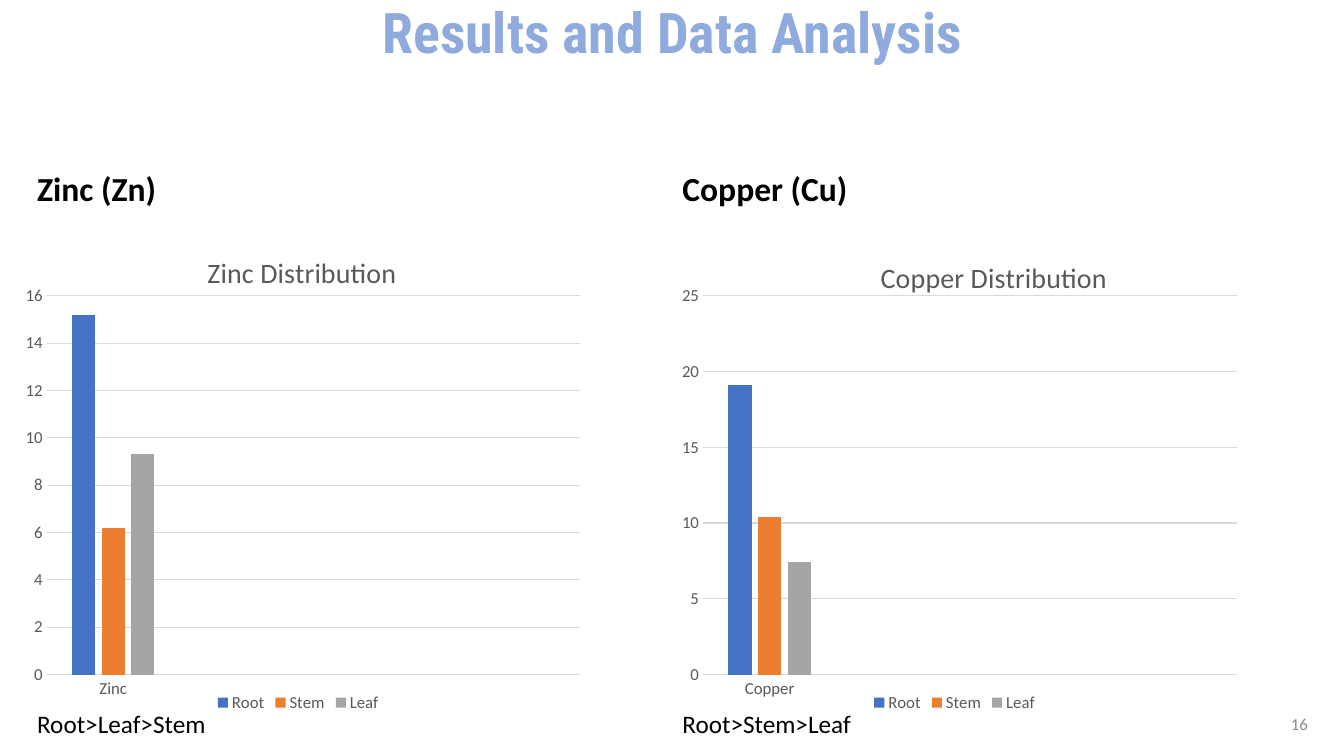
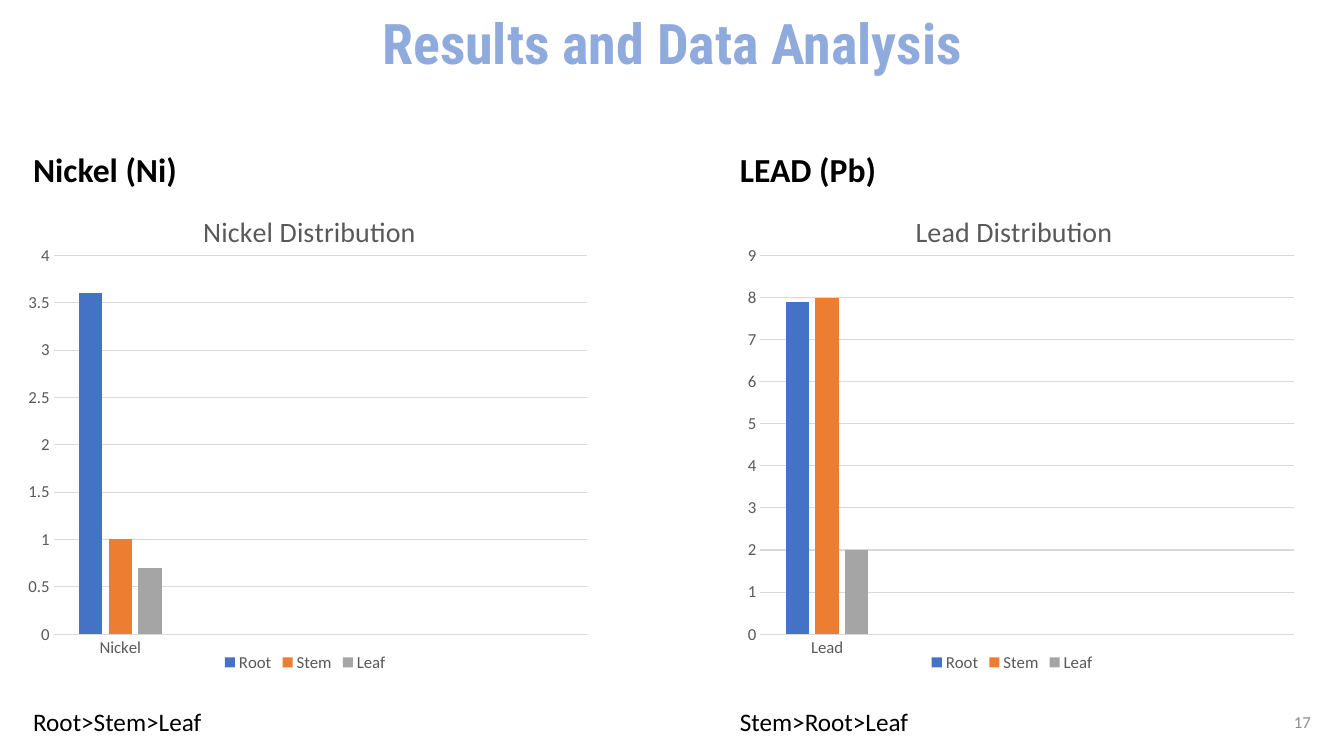
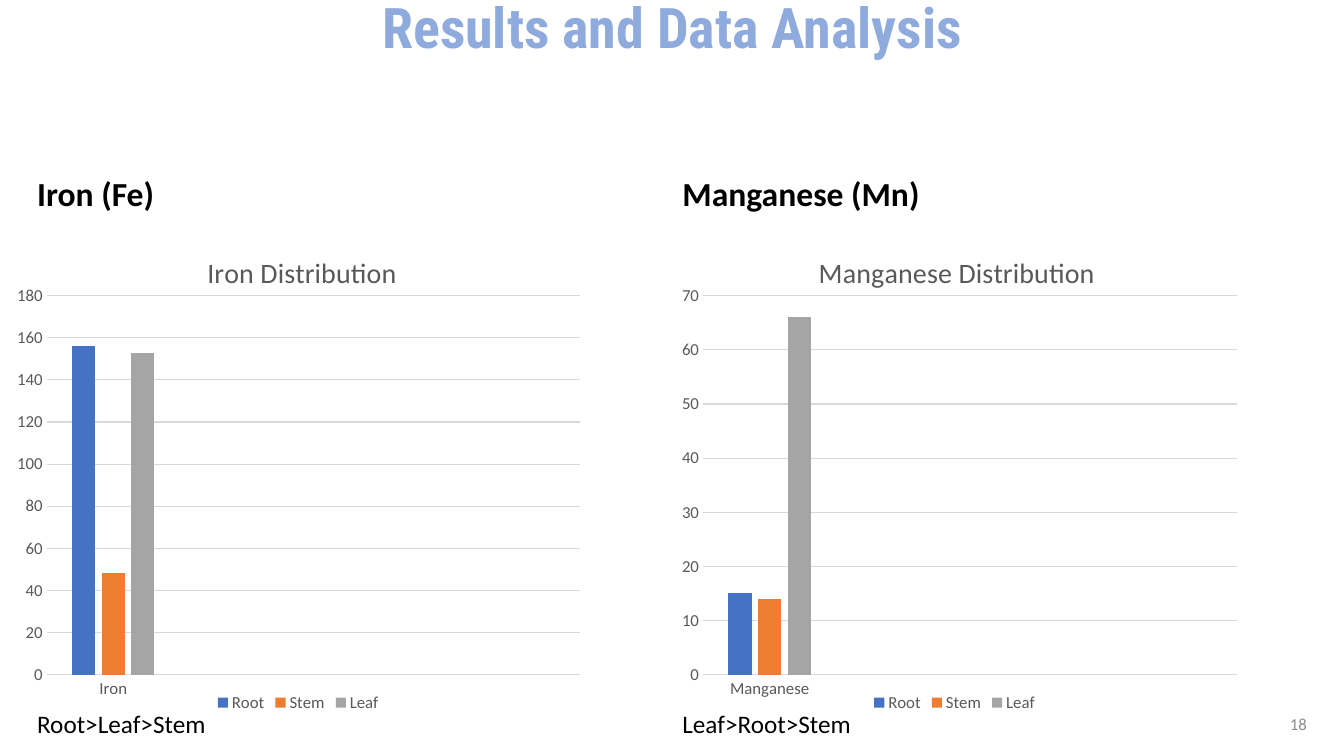
import pptx
import pptx.chart.data
import pptx.dml.color
import pptx.enum.chart
import pptx.enum.text
import pptx.oxml
import pptx.oxml.ns
import pptx.util
from dataclasses import dataclass

Inches, Pt = pptx.util.Inches, pptx.util.Pt
RGB = pptx.dml.color.RGBColor.from_string
Align, Anchor = pptx.enum.text.PP_ALIGN, pptx.enum.text.MSO_ANCHOR
qn = pptx.oxml.ns.qn


@dataclass(frozen=True)
class Theme:
    body_font: str = "Calibri"
    title_font: str = "Roboto Condensed"
    title_color: str = "8FAADC"
    text_color: str = "000000"
    number_color: str = "8C8C8C"
    chart_text: str = "595959"
    grid: str = "D9D9D9"
    organs: tuple = (("Root", "4472C4"), ("Stem", "ED7D31"), ("Leaf", "A5A5A5"))
    title_size: int = 40
    heading_size: int = 24
    chart_title_size: int = 20
    note_size: int = 18
    small_size: int = 12


theme = Theme()


def add_text(s, box, text, size, color=theme.text_color, font=theme.body_font,
             bold=False, align=Align.LEFT, anchor=Anchor.TOP, spacing=None):
    tf = s.shapes.add_textbox(*[Inches(v) for v in box]).text_frame
    tf.word_wrap = True
    tf.vertical_anchor = anchor
    p = tf.paragraphs[0]
    p.alignment = align
    p.line_spacing = spacing
    r = p.add_run()
    r.text = text
    r.font.name, r.font.size, r.font.bold = font, Pt(size), bold
    r.font.color.rgb = RGB(color)


def set_layout(parent, index, target="", **values):
    """Place a chart element by fractions of the chart's size."""
    old = parent.find(qn("c:layout"))
    if old is not None:
        parent.remove(old)
    inner = f'<c:layoutTarget val="{target}"/>' if target else ""
    inner += "".join(f'<c:{k}Mode val="edge"/>' for k in ("x", "y"))
    inner += "".join(f'<c:{k} val="{v}"/>' for k, v in values.items())
    parent.insert(index, pptx.oxml.parse_xml(
        f'<c:layout {pptx.oxml.ns.nsdecls("c")}><c:manualLayout>{inner}'
        "</c:manualLayout></c:layout>"))


# Panel: chart left, heading left and width, metal, heading, values, order,
# chart title left and top as fractions of the chart
slides = [
    dict(number="16", title_h=0.7, heading_y=1.62, chart_y=2.21, note_y=6.98, number_x=10.07, panels=[
        (0.16, 0.27, 3.21, "Zinc", "Zinc (Zn)", (15.2, 6.2, 9.3), "Root>Leaf>Stem", 0.33, 0.05),
        (6.67, 6.67, 2.17, "Copper", "Copper (Cu)", (19.1, 10.4, 7.4), "Root>Stem>Leaf", 0.36, 0.06)]),
    dict(number="17", title_h=0.81, heading_y=1.43, chart_y=1.81, note_y=6.96, number_x=10.1, panels=[
        (0.23, 0.23, 2.41, "Nickel", "Nickel (Ni)", (3.6, 1, 0.7), "Root>Stem>Leaf", 0.31, 0.05),
        (7.24, 7.24, 3.06, "Lead", "LEAD (Pb)", (7.9, 8, 2), "Stem>Root>Leaf", 0.32, 0.05)]),
    dict(number="18", title_h=0.65, heading_y=1.67, chart_y=2.21, note_y=6.98, number_x=10.06, panels=[
        (0.16, 0.27, 2.6, "Iron", "Iron (Fe)", (156, 48, 153), "Root>Leaf>Stem", 0.33, 0.05),
        (6.67, 6.67, 3.1, "Manganese", "Manganese (Mn)", (15, 14, 66), "Leaf>Root>Stem", 0.25, 0.05)]),
]

prs = pptx.Presentation()
prs.slide_width, prs.slide_height = Inches(13.33), Inches(7.5)

for page in slides:
    s = prs.slides.add_slide(prs.slide_layouts[6])

    # Title
    add_text(s, (0, 0, 13.33, page["title_h"]), "Results and Data Analysis",
             theme.title_size, theme.title_color, theme.title_font, True,
             Align.CENTER, Anchor.BOTTOM, 0.9)

    for chart_x, text_x, heading_w, metal, heading, values, order, title_x, title_y in page["panels"]:
        # Chart: the metal takes the first of four category slots
        data = pptx.chart.data.CategoryChartData()
        data.categories = [metal, "", "", ""]
        for (organ, _), value in zip(theme.organs, values):
            data.add_series(organ, [value, None, None, None])
        chart = s.shapes.add_chart(
            pptx.enum.chart.XL_CHART_TYPE.COLUMN_CLUSTERED, Inches(chart_x),
            Inches(page["chart_y"]), Inches(5.6), Inches(4.9), data).chart
        chart.font.name, chart.font.size = theme.body_font, Pt(theme.small_size)
        chart.font.color.rgb = RGB(theme.chart_text)

        # Chart title
        r = chart.chart_title.text_frame.paragraphs[0].add_run()
        r.text = f"{metal} Distribution"
        r.font.name, r.font.size, r.font.bold = theme.body_font, Pt(theme.chart_title_size), False
        r.font.color.rgb = RGB(theme.chart_text)
        set_layout(chart.chart_title._element, 1, x=title_x, y=title_y)

        # Columns
        plot = chart.plots[0]
        plot.gap_width, plot.overlap, plot.vary_by_categories = 219, -27, False
        for series, (_, color) in zip(plot.series, theme.organs):
            series.format.fill.solid()
            series.format.fill.fore_color.rgb = RGB(color)
        set_layout(chart._chartSpace.chart.plotArea, 0, "inner", x=0.054, y=0.148, w=0.946, h=0.767)

        # Axes and legend
        grid = chart.value_axis.major_gridlines.format.line
        for line in (grid, chart.category_axis.format.line):
            line.width = Pt(0.75)
            line.color.rgb = RGB(theme.grid)
        chart.value_axis.format.line.fill.background()
        for axis in (chart.category_axis, chart.value_axis):
            axis.major_tick_mark = pptx.enum.chart.XL_TICK_MARK.NONE
        chart.has_legend = True
        chart.legend.position = pptx.enum.chart.XL_LEGEND_POSITION.BOTTOM
        chart.legend.include_in_layout = False

        # Heading above, order of uptake below
        add_text(s, (text_x, page["heading_y"], heading_w, 0.5), heading, theme.heading_size, bold=True)
        add_text(s, (text_x, page["note_y"], 4, 0.41), order, theme.note_size)

    # Slide number
    add_text(s, (page["number_x"], page["note_y"], 3, 0.4), page["number"], theme.small_size,
             theme.number_color, align=Align.RIGHT, anchor=Anchor.MIDDLE)

prs.save("out.pptx")
